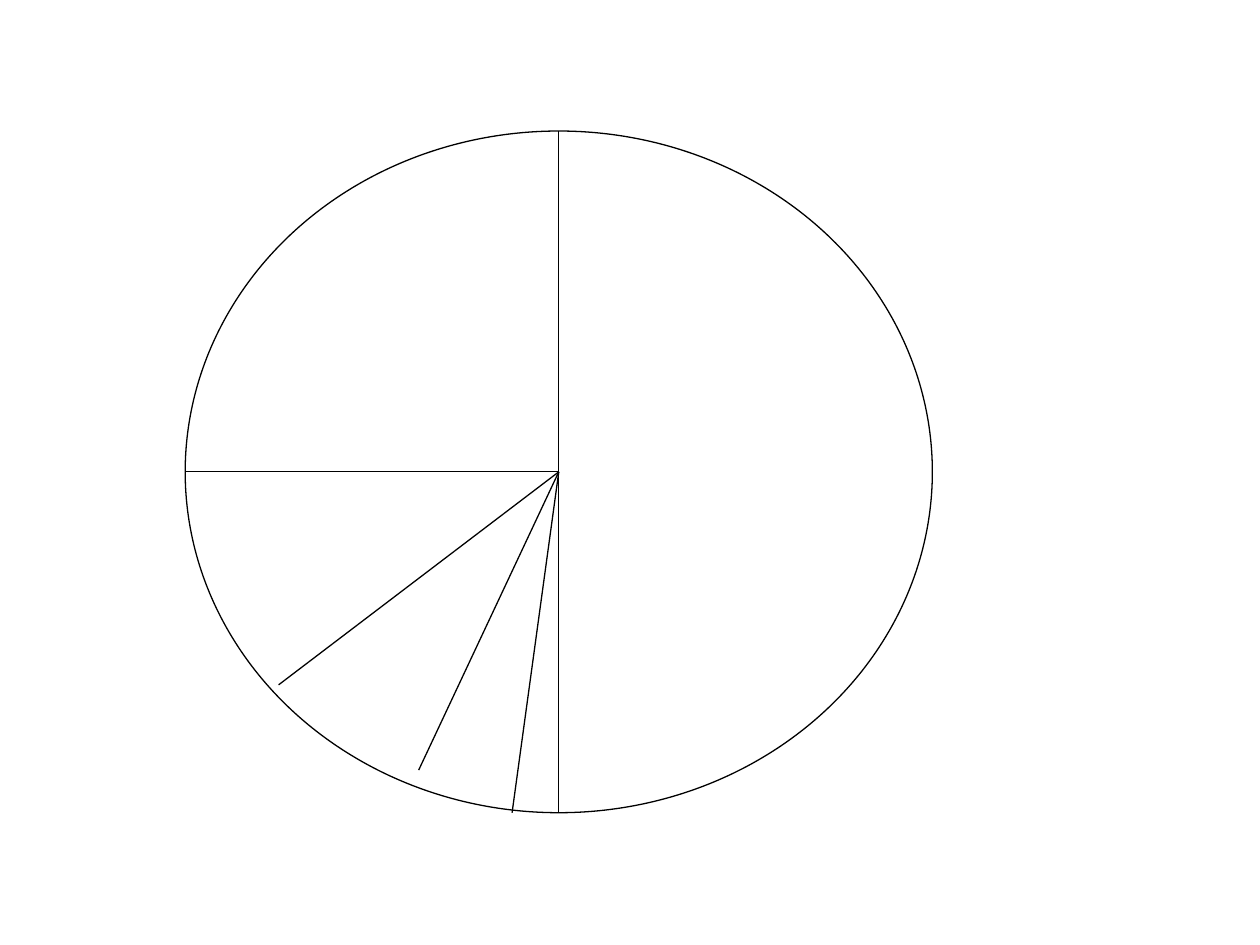
from pptx import Presentation
from pptx import util as u
from pptx.dml.color import RGBColor
from pptx.enum import shapes
from lxml import etree

COLORS = {"paper": "FFFFFF", "ink": "000000"}
LEFT, TOP = 1.47, 1.04
CELLS = 16
COLUMN, ROW = 5.93 / CELLS, 5.41 / CELLS
CENTER = (CELLS / 2, CELLS / 2)
DIVIDERS = [
    ((8, 0), (8, 16)),
    ((0, 8), CENTER),
    ((2, 13), CENTER),
    ((5, 15), CENTER),
    ((7, 16), CENTER),
]


def color(name):
    return RGBColor.from_string(COLORS[name])


def grid_point(column, row):
    return u.Inches(LEFT + column * COLUMN), u.Inches(TOP + row * ROW)


def draw_outline(line):
    line.color.rgb = color("ink")
    line.width = u.Pt(0.75)


def add_circle(parent):
    circle = parent.add_shape(
        shapes.MSO_SHAPE.OVAL, *grid_point(0, 0),
        u.Inches(CELLS * COLUMN), u.Inches(CELLS * ROW))
    circle.shadow.inherit = False
    circle.fill.solid()
    circle.fill.fore_color.rgb = color("paper")
    draw_outline(circle.line)


def add_divider(parent, start, end):
    divider = parent.add_connector(
        shapes.MSO_CONNECTOR.STRAIGHT, *grid_point(*start), *grid_point(*end))
    draw_outline(divider.line)
    namespace = "{http://schemas.openxmlformats.org/drawingml/2006/main}"
    etree.SubElement(divider._element.spPr, namespace + "effectLst")


def main():
    deck = Presentation()
    deck.slide_width, deck.slide_height = u.Inches(10), u.Inches(7.5)
    slide = deck.slides.add_slide(deck.slide_layouts[6])
    pie = slide.shapes.add_group_shape().shapes
    add_circle(pie)
    for start, end in DIVIDERS:
        add_divider(pie, start, end)
    deck.save("out.pptx")


if __name__ == "__main__":
    main()
